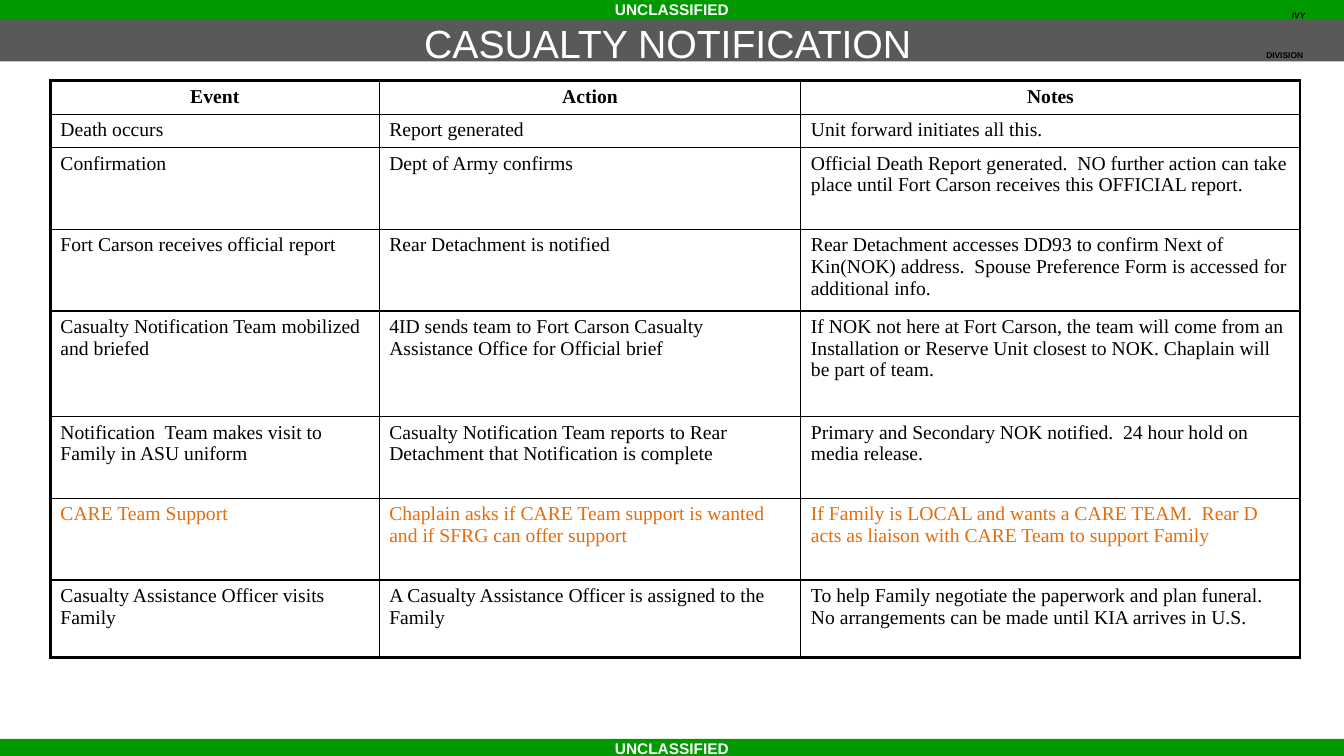
"""Build the casualty notification slide."""
from lxml import etree
from pptx import Presentation
from pptx import util as u
from pptx.dml import color
from pptx.enum import shapes, text
from pptx.oxml import ns

ROWS = [
    ("Event", "Action", "Notes"),
    ("Death occurs", "Report generated", "Unit forward initiates all this."),
    ("Confirmation", "Dept of Army confirms",
     "Official Death Report generated.  NO further action can take place until "
     "Fort Carson receives this OFFICIAL report."),
    ("Fort Carson receives official report", "Rear Detachment is notified",
     "Rear Detachment accesses DD93 to confirm Next of Kin(NOK) address.  "
     "Spouse Preference Form is accessed for additional info."),
    ("Casualty Notification Team mobilized and briefed",
     "4ID sends team to Fort Carson Casualty Assistance Office for Official brief",
     "If NOK not here at Fort Carson, the team will come from an Installation or "
     "Reserve Unit closest to NOK. Chaplain will be part of team."),
    ("Notification  Team makes visit to Family in ASU uniform",
     "Casualty Notification Team reports to Rear Detachment that Notification is complete",
     "Primary and Secondary NOK notified.  24 hour hold on media release."),
    ("CARE Team Support",
     "Chaplain asks if CARE Team support is wanted and if SFRG can offer support",
     "If Family is LOCAL and wants a CARE TEAM.  Rear D acts as liaison with "
     "CARE Team to support Family"),
    ("Casualty Assistance Officer visits Family",
     "A Casualty Assistance Officer is assigned to the Family",
     "To help Family negotiate the paperwork and plan funeral. No arrangements "
     "can be made until KIA arrives in U.S."),
]
COLS = [234.9, 301.2, 356.6]
HIGH = [24, 24, 58.3, 58.3, 75.6, 58.3, 58.3, 55.4]
CARE = 6
WIDE, TALL = 960, 540
MARK = "UNCLASSIFIED"
BARS = [("", 1.4, 42.5, "595959"), (MARK, 0, 13.7, "009900"),
        (MARK, 527.8, 13.7, "009900")]
WHITE = {"name": "Arial", "size": u.Pt(11), "bold": True}
BADGE = {"name": "Arial", "size": u.Pt(6), "bold": True}
TITLE = {"name": "Arial", "size": u.Pt(28), "bold": False}
BODY = {"name": "Times New Roman", "size": u.Pt(14), "bold": False}
HEAD = {**BODY, "bold": True}
LABELS = [("DIVISION", (892.8, 33.1, 49.7, 12.2), 0, BADGE, "000000"),
          ("IVY", (895, 5, 65.5, 12.2), 6.9, BADGE, "000000"),
          ("CASUALTY NOTIFICATION", (113, 16.6, 728, 28), 0, TITLE, "FFFFFF")]


def paint(fmt, hue):
    """Give a fill or font a solid colour."""
    if hasattr(fmt, "solid"):
        fmt.solid()
        fmt.fore_color.rgb = color.RGBColor.from_string(hue)
    else:
        fmt.color.rgb = color.RGBColor.from_string(hue)


def write(frame, words, look, hue, align=text.PP_ALIGN.CENTER):
    """Write one paragraph in a text frame."""
    para = frame.paragraphs[0]
    para.alignment = align
    run = para.add_run()
    run.text = words
    for key, val in look.items():
        setattr(run.font, key, val)
    paint(run.font, hue)


def center(frame):
    """Wrap text, drop the insets and anchor it in the middle."""
    look = {"word_wrap": True, "vertical_anchor": text.MSO_ANCHOR.MIDDLE,
            "margin_left": 0, "margin_right": 0, "margin_top": 0, "margin_bottom": 0}
    for key, val in look.items():
        setattr(frame, key, val)


def border(cell, sides):
    """Draw black cell borders with the given widths."""
    props = cell._tc.get_or_add_tcPr()
    for side, width in sides.items():
        line = etree.SubElement(props, ns.qn("a:ln" + side), w=str(u.Pt(width)))
        fill = etree.SubElement(line, ns.qn("a:solidFill"))
        etree.SubElement(fill, ns.qn("a:srgbClr"), val="000000")


def add_bar(slide, words, top, high, hue):
    """Add one full-width band."""
    bar = slide.shapes.add_shape(shapes.MSO_SHAPE.RECTANGLE, 0, u.Pt(top),
                                 u.Pt(WIDE), u.Pt(high))
    bar.shadow.inherit = False
    bar.line.fill.background()
    paint(bar.fill, hue)
    if words:
        center(bar.text_frame)
        write(bar.text_frame, words, WHITE, "FFFFFF")


def add_label(slide, words, place, turn, look, hue):
    """Add one text box."""
    box = slide.shapes.add_textbox(*map(u.Pt, place))
    box.rotation = turn
    center(box.text_frame)
    write(box.text_frame, words, look, hue)


def add_grid(slide):
    """Add the table of events."""
    grid = slide.shapes.add_table(len(ROWS), len(COLS), u.Pt(36), u.Pt(57.6),
                                  u.Pt(sum(COLS)), u.Pt(sum(HIGH))).table
    grid.first_row = grid.horz_banding = False
    for col, width in zip(grid.columns, COLS):
        col.width = u.Pt(width)
    for r, (row, high) in enumerate(zip(ROWS, HIGH)):
        grid.rows[r].height = u.Pt(high)
        look = BODY if r else HEAD
        align = text.PP_ALIGN.LEFT if r else text.PP_ALIGN.CENTER
        hue = "E46C0A" if r == CARE else "000000"
        for c, words in enumerate(row):
            cell = grid.cell(r, c)
            edge = {"L": c == 0, "R": c == len(COLS) - 1,
                    "T": r == 0, "B": r == len(ROWS) - 1}
            border(cell, {side: 2.25 if out else 1 for side, out in edge.items()})
            cell.fill.background()
            write(cell.text_frame, words, look, hue, align)


def main():
    """Make and save the deck."""
    deck = Presentation()
    deck.slide_width, deck.slide_height = u.Pt(WIDE), u.Pt(TALL)
    slide = deck.slides.add_slide(deck.slide_layouts[6])
    for bar in BARS:
        add_bar(slide, *bar)
    add_grid(slide)
    for label in LABELS:
        add_label(slide, *label)
    deck.save("out.pptx")


if __name__ == "__main__":
    main()
